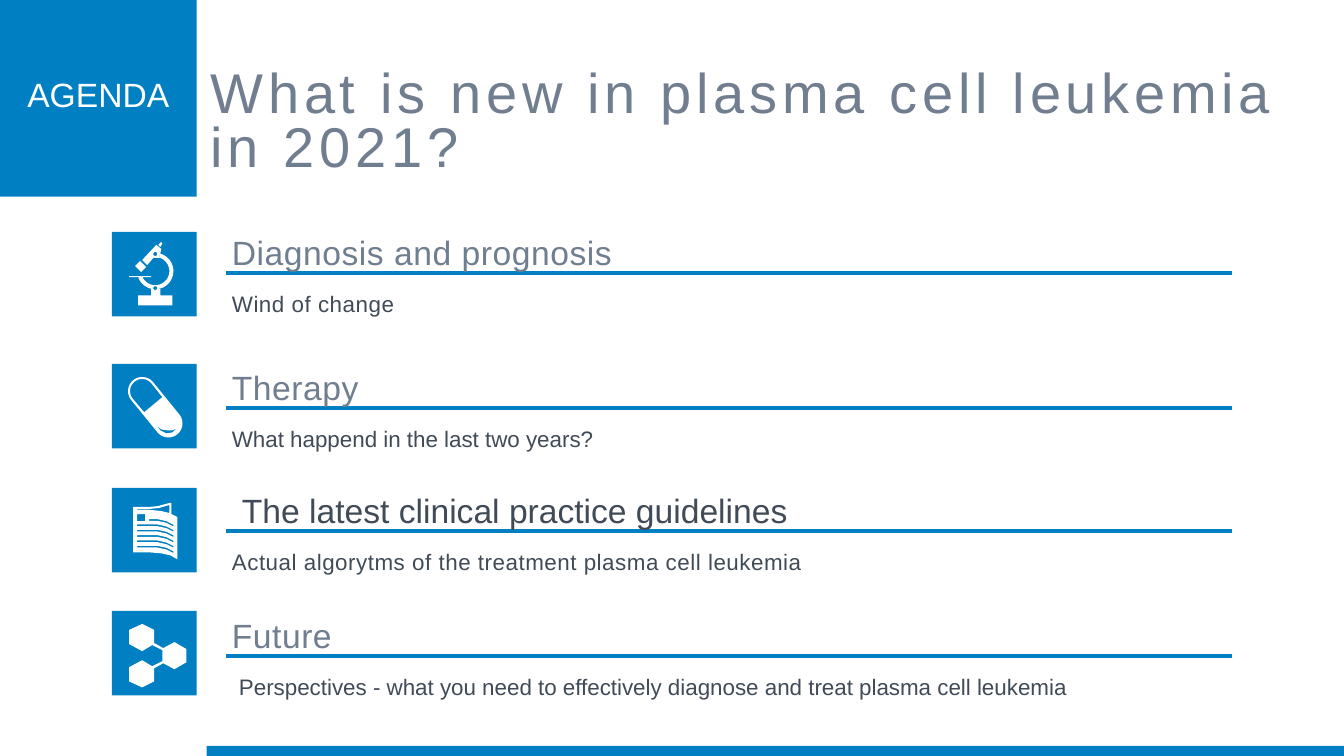
"""Build the agenda slide on plasma cell leukemia."""
from math import cos, radians, sin

from lxml import etree
from pptx import Presentation
from pptx.dml.color import RGBColor
from pptx.enum.shapes import MSO_CONNECTOR, MSO_SHAPE
from pptx.enum.text import MSO_ANCHOR, PP_ALIGN
from pptx.oxml.ns import qn
from pptx.util import Inches, Pt

RECT = MSO_SHAPE.RECTANGLE
STRAIGHT = MSO_CONNECTOR.STRAIGHT
MIDDLE, BOTTOM = MSO_ANCHOR.MIDDLE, MSO_ANCHOR.BOTTOM
LEFT, CENTER = PP_ALIGN.LEFT, PP_ALIGN.CENTER
BLUE, GREY, DARK, WHITE = "0080C2", "707E90", "404B57", "FFFFFF"
rgb = RGBColor.from_string


def arc(x, y, radius, start, end):
    """Return points along an arc, with angles in degrees."""
    angles = [radians(start + (end - start) * i / 24) for i in range(25)]
    return [(x + radius * cos(a), y + radius * sin(a)) for a in angles]


def box(left, top, right, bottom):
    """Return the corners of a rectangle."""
    return [(left, top), (right, top), (right, bottom), (left, bottom)]


prs = Presentation()
prs.slide_width, prs.slide_height = Inches(13.33), Inches(7.5)
slide = prs.slides.add_slide(prs.slide_layouts[6])

microscope = [
    [(1.6, 2.4), (1.57, 2.43), (1.59, 2.45), (1.61, 2.42)],
    [(1.55, 2.43), (1.41, 2.58), (1.46, 2.63), (1.52, 2.56), (1.58, 2.56), (1.6, 2.47)],
    [(1.39, 2.59), (1.34, 2.64), (1.4, 2.7), (1.45, 2.65)],
    arc(1.54, 2.69, 0.18, -75, 158) + arc(1.54, 2.69, 0.14, 158, -75),
    arc(1.54, 2.52, 0.02, 0, 360),
    arc(1.54, 2.86, 0.02, 0, 360),
    box(1.28, 2.74, 1.5, 2.75),
    box(1.5, 2.87, 1.59, 2.93),
    box(1.37, 2.93, 1.71, 3.03),
]
pill = [
    arc(1.41, 3.88, 0.14, 140, 320) + arc(1.67, 4.2, 0.14, -40, 140),
    arc(1.41, 3.88, 0.12, 140, 320) + [(1.61, 3.94), (1.43, 4.09)],
    [(1.55, 4.22), (1.6, 4.26), (1.66, 4.27), (1.71, 4.27), (1.75, 4.25),
     (1.71, 4.29), (1.65, 4.3), (1.59, 4.27)],
]
newspaper = [
    [(1.32, 5.03), (1.48, 5.03), (1.57, 5.02), (1.68, 4.99), (1.7, 4.99), (1.7, 5.1),
     (1.76, 5.13), (1.76, 5.55), (1.69, 5.51), (1.6, 5.49), (1.48, 5.48), (1.32, 5.48)],
    [(1.36, 5.05), (1.48, 5.05), (1.58, 5.04), (1.68, 5.01), (1.68, 5.09), (1.6, 5.07),
     (1.5, 5.06), (1.36, 5.06)],
    box(1.36, 5.1, 1.44, 5.17),
]
for i in range(6):
    start, y = 1.36 if i else 1.48, 5.15 + i * 0.053
    edge = [(start, y), (1.56, y), (1.65, y + 0.02), (1.72, y + 0.055)]
    newspaper.append(edge + [(x, v + 0.017) for x, v in reversed(edge)])
molecule = [[
    (1.41, 6.19), (1.28, 6.25), (1.28, 6.39), (1.41, 6.46), (1.51, 6.4), (1.61, 6.45),
    (1.61, 6.56), (1.51, 6.61), (1.41, 6.55), (1.28, 6.62), (1.28, 6.76), (1.41, 6.82),
    (1.53, 6.76), (1.53, 6.63), (1.62, 6.58), (1.73, 6.64), (1.85, 6.57), (1.85, 6.44),
    (1.73, 6.37), (1.62, 6.43), (1.53, 6.38), (1.53, 6.25),
]]

topics = [
    (2.3, 2.71, microscope, ("Diagnosis and prognosis", GREY, 0.06, 0.4),
     ("Wind of change", 0.06, 0.4)),
    (3.61, 4.05, pill, ("Therapy", GREY, 0.06, 0.4),
     ("What happend in the last two years?", 0.06, 0)),
    (4.84, 5.27, newspaper, ("The latest clinical practice guidelines", DARK, 0.16, 0),
     ("Actual algorytms of the treatment plasma cell leukemia", 0.06, 0.4)),
    (6.06, 6.51, molecule, ("Future", GREY, 0.06, 0.4),
     ("Perspectives - what you need to effectively diagnose and treat plasma cell leukemia",
      0.13, 0)),
]

blocks = [(0, 0, 1.95, 1.95), (2.05, 7.4, 11.28, 0.1)]
blocks += [(1.11, topic[0], 0.84, 0.84) for topic in topics]
for block in blocks:
    s = slide.shapes.add_shape(RECT, *map(Inches, block))
    s.shadow.inherit = False
    s.fill.solid()
    s.fill.fore_color.rgb = rgb(BLUE)
    s.line.fill.background()

texts = [
    ("AGENDA", (0, 0.72, 1.95, 0.48), 24, WHITE, 0.06, 0.06, 0, 0.9, BOTTOM, CENTER),
    ("What is new in plasma cell leukemia in 2021?", (2.09, 0.21, 10.58, 1.56),
     40, GREY, 0, 0, 3.4, 0.8, BOTTOM, LEFT),
]
for top, rule, icon, (heading, color, indent, gap), (detail, inset, spacing) in topics:
    texts.append((heading, (2.24, rule - 0.59, 10.05, 0.64), 24, color, indent, 0.06, gap,
                  1.3, MIDDLE, LEFT))
    texts.append((detail, (2.24, rule + 0.03, 10.05, 0.46), 16, DARK, inset, 0.06, spacing,
                  1.3, MIDDLE, LEFT))

    line = slide.shapes.add_connector(
        STRAIGHT, Inches(2.24), Inches(rule), Inches(12.22), Inches(rule))
    line.line.color.rgb = rgb(BLUE)
    line.line.width = Pt(3)
    etree.SubElement(line._element.spPr, qn("a:effectLst"))

    contours = [[(Inches(x), Inches(y)) for x, y in contour] for contour in icon]
    builder = slide.shapes.build_freeform(*contours[0][0])
    builder.add_line_segments(contours[0][1:])
    for contour in contours[1:]:
        builder.move_to(*contour[0])
        builder.add_line_segments(contour[1:])
    s = builder.convert_to_shape()
    s.shadow.inherit = False
    s.fill.solid()
    s.fill.fore_color.rgb = rgb(WHITE)
    s.line.fill.background()

for text, place, size, color, indent, margin, spacing, leading, anchor, align in texts:
    tf = slide.shapes.add_textbox(*map(Inches, place)).text_frame
    tf.word_wrap = True
    tf.vertical_anchor = anchor
    tf.margin_left = Inches(indent)
    tf.margin_top = tf.margin_right = tf.margin_bottom = Inches(margin)
    p = tf.paragraphs[0]
    p.alignment = align
    p.line_spacing = leading
    p.font.name = "Arial"
    p.font.size = Pt(size)
    p.font.color.rgb = rgb(color)
    r = p.add_run()
    r.text = text
    if spacing:
        r._r.get_or_add_rPr().set("spc", str(round(spacing * 100)))

prs.save("out.pptx")
